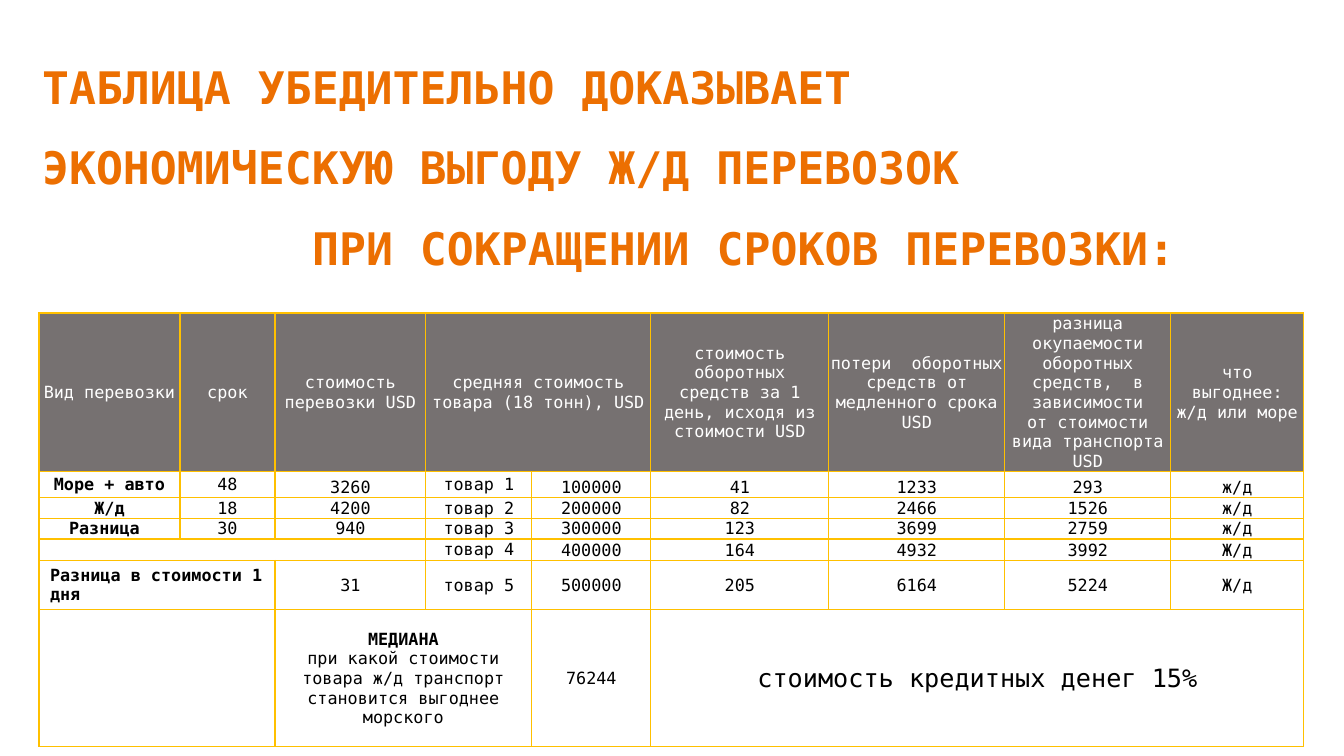
from lxml import etree
from pptx import Presentation
from pptx import util as u
from pptx.dml.color import RGBColor
from pptx.enum import text as t
from pptx.oxml.ns import qn

PX = 914400 / 100.8
THEME = dict(font="DejaVu Sans Mono", head="EC6F01", gray="767171", white="FFFFFF",
             black="000000", gold="FFC000", title=32, body=12, large=18)
MID, LOW = t.MSO_ANCHOR.MIDDLE, t.MSO_ANCHOR.BOTTOM
LEFT, MEAN = t.PP_ALIGN.LEFT, t.PP_ALIGN.CENTER


def px(n):
    return u.Emu(round(n * PX))


def write(frame, words, size="body", color="black", bold=False, align=MEAN, lead=1.0):
    frame.text = words
    frame.word_wrap = True
    for para in frame.paragraphs:
        para.alignment = align
        para.line_spacing = lead
        for run in para.runs:
            run.font.name = THEME["font"]
            run.font.size = u.Pt(THEME[size])
            run.font.bold = bold
            run.font.color.rgb = RGBColor.from_string(THEME[color])
        points = str(THEME[size] * 100)
        for gap in para._p.findall(qn("a:br")):
            etree.SubElement(gap, qn("a:rPr"), sz=points)
        if not para.runs:
            etree.SubElement(para._p, qn("a:endParaRPr"), sz=points)


deck = Presentation()
deck.slide_width, deck.slide_height = px(1344), px(756)
slide = deck.slides.add_slide(deck.slide_layouts[5])

title = slide.shapes.title
title.left, title.top, title.width, title.height = px(32), px(32), px(1159), px(243)
write(title.text_frame,
      "ТАБЛИЦА УБЕДИТЕЛЬНО ДОКАЗЫВАЕТ ЭКОНОМИЧЕСКУЮ ВЫГОДУ Ж/Д ПЕРЕВОЗОК\n"
      "ПРИ СОКРАЩЕНИИ СРОКОВ ПЕРЕВОЗКИ:",
      size="title", color="head", bold=True, align=LEFT, lead=1.5)
title.text_frame.vertical_anchor = MID
title.text_frame.auto_size = t.MSO_AUTO_SIZE.NONE
title.text_frame.paragraphs[1]._p.get_or_add_pPr().set("marL", str(px(270)))

rows = [
    ["Вид перевозки", "срок", "стоимость перевозки USD",
     "средняя стоимость товара (18 тонн), USD", None,
     "стоимость оборотных\vсредств за 1 день, исходя из стоимости USD",
     "потери  оборотных\vсредств от медленного срока\vUSD",
     "разница окупаемости оборотных средств,  в зависимости\vот стоимости вида транспорта USD",
     "что выгоднее: ж/д или море"],
    ["Море + авто", "48", "3260", "товар 1", "100000", "41", "1233", "293", "ж/д"],
    ["Ж/д", "18", "4200", "товар 2", "200000", "82", "2466", "1526", "ж/д"],
    ["Разница ", "30", "940", "товар 3", "300000", "123", "3699", "2759", "ж/д"],
    ["", None, None, "товар 4", "400000", "164", "4932", "3992", "Ж/д"],
    ["Разница в стоимости 1 дня", None, "31", "товар 5", "500000", "205", "6164", "5224", "Ж/д"],
    ["", None,
     "МЕДИАНА\nпри какой стоимости товара ж/д транспорт становится выгоднее морского", None,
     "76244", "стоимость кредитных денег 15%", None, None, None],
]
wide = [141, 95, 151, 106, 119, 178, 176, 166, 133]
high = [125, 26, 20, 20, 20, 20, 137]

shape = slide.shapes.add_table(len(high), len(wide), px(39), px(313), px(sum(wide)), px(384))
grid = shape.table
grid.first_row = grid.horz_banding = False
for col, size in zip(grid.columns, wide):
    col.width = px(size)
for row, size in zip(grid.rows, high):
    row.height = px(size)
shape.height = px(384)

for r, row in enumerate(rows):
    for c, words in enumerate(row):
        cell = grid.cell(r, c)
        props = cell._tc.get_or_add_tcPr()
        for side in ("lnL", "lnR", "lnT", "lnB"):
            line = etree.SubElement(props, qn("a:" + side), w=str(u.Pt(1)))
            fill = etree.SubElement(line, qn("a:solidFill"))
            etree.SubElement(fill, qn("a:srgbClr"), val=THEME["gold"])
        cell.fill.solid()
        cell.fill.fore_color.rgb = RGBColor.from_string(THEME["white" if r else "gray"])
        note = r == 5 and c == 0
        cell.margin_left = cell.margin_right = px(11 if note else 1)
        cell.margin_top, cell.margin_bottom = px(5 if note else 1), px(5 if note else 0)
        cell.vertical_anchor = LOW if 1 <= r <= 4 and c in (2, 4, 5, 6, 7, 8) else MID
        write(cell.text_frame, words or "", color="black" if r else "white",
              size="large" if r == 6 and c == 5 else "body",
              bold=r > 0 and c == 0, align=LEFT if note else MEAN)
        if words is not None:
            end = c
            while end + 1 < len(row) and row[end + 1] is None:
                end += 1
            if end > c:
                cell.merge(grid.cell(r, end))

grid.cell(6, 2).text_frame.paragraphs[0].runs[0].font.bold = True
deck.save("out.pptx")
